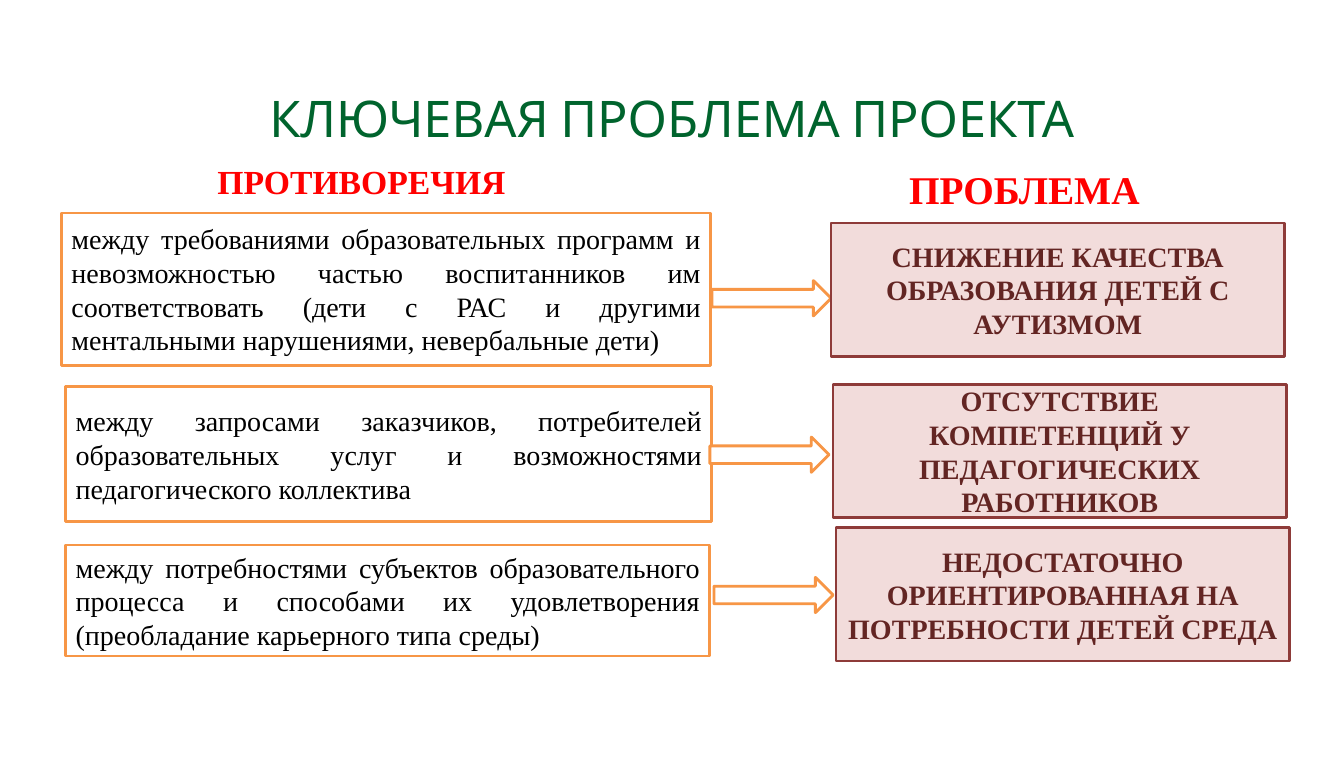
from pptx import Presentation
from pptx.dml.color import RGBColor
from pptx.enum.shapes import MSO_SHAPE
from pptx.enum.text import MSO_ANCHOR, MSO_AUTO_SIZE, PP_ALIGN
from pptx.util import Inches, Pt

GREEN = RGBColor(0x00, 0x64, 0x2D)
RED = RGBColor(0xFF, 0x00, 0x00)
BLACK = RGBColor(0x00, 0x00, 0x00)
WHITE = RGBColor(0xFF, 0xFF, 0xFF)
ORANGE = RGBColor(0xF7, 0x96, 0x46)
PINK = RGBColor(0xF2, 0xDC, 0xDB)
MAROON = RGBColor(0x8E, 0x3B, 0x39)
DARK_RED = RGBColor(0x63, 0x25, 0x23)

CONTRADICTIONS = [
    ((0.61, 2.11, 6.43, 1.51),
     "между требованиями образовательных программ и невозможностью частью "
     "воспитанников им соответствовать (дети с РАС и другими ментальными "
     "нарушениями, невербальные дети)"),
    ((0.65, 3.83, 6.4, 1.34),
     "между запросами заказчиков, потребителей образовательных услуг и "
     "возможностями педагогического коллектива"),
    ((0.65, 5.4, 6.38, 1.1),
     "между потребностями субъектов образовательного процесса и способами "
     "их удовлетворения (преобладание карьерного типа среды)"),
]
PROBLEMS = [
    ((8.23, 2.21), "СНИЖЕНИЕ КАЧЕСТВА ОБРАЗОВАНИЯ ДЕТЕЙ С АУТИЗМОМ"),
    ((8.25, 3.81), "ОТСУТСТВИЕ КОМПЕТЕНЦИЙ У ПЕДАГОГИЧЕСКИХ РАБОТНИКОВ"),
    ((8.28, 5.23), "НЕДОСТАТОЧНО ОРИЕНТИРОВАННАЯ НА ПОТРЕБНОСТИ ДЕТЕЙ СРЕДА"),
]
ARROWS = [(7.05, 2.78), (7.03, 4.33), (7.07, 5.72)]


def write(tf, text, size=20, color=BLACK, font="Times New Roman",
          bold=False, align=PP_ALIGN.CENTER, spacing=None):
    p = tf.paragraphs[0]
    p.alignment = align
    if spacing:
        p.line_spacing = spacing
    r = p.add_run()
    r.text = text
    r.font.size = Pt(size)
    r.font.name = font
    r.font.bold = bold
    r.font.color.rgb = color


def add_label(s, box, text, wrap=True, margins=True, **fmt):
    tf = s.shapes.add_textbox(*map(Inches, box)).text_frame
    tf.word_wrap = wrap
    tf.auto_size = MSO_AUTO_SIZE.SHAPE_TO_FIT_TEXT
    if not margins:
        tf.margin_left = tf.margin_right = tf.margin_top = tf.margin_bottom = 0
    write(tf, text, **fmt)


def add_figure(s, kind, box, fill=WHITE, line=ORANGE):
    sp = s.shapes.add_shape(kind, *map(Inches, box))
    sp.shadow.inherit = False
    sp.fill.solid()
    sp.fill.fore_color.rgb = fill
    sp.line.color.rgb = line
    sp.line.width = Pt(2)
    return sp


def add_card(s, box, text, fill=WHITE, line=ORANGE, **fmt):
    tf = add_figure(s, MSO_SHAPE.RECTANGLE, box, fill, line).text_frame
    tf.word_wrap = True
    tf.vertical_anchor = MSO_ANCHOR.MIDDLE
    write(tf, text, **fmt)


def main():
    prs = Presentation()
    prs.slide_width, prs.slide_height = Inches(13.31), Inches(7.5)
    s = prs.slides.add_slide(prs.slide_layouts[6])

    add_label(s, (0, 0.93, 13.31, 0.55), "КЛЮЧЕВАЯ ПРОБЛЕМА ПРОЕКТА",
              margins=False, size=36, color=GREEN, font="Cabin", spacing=0.9)
    add_label(s, (1.14, 1.54, 4.88, 0.5), "ПРОТИВОРЕЧИЯ",
              size=24, color=RED, bold=True)
    add_label(s, (8.89, 1.59, 2.51, 0.57), "ПРОБЛЕМА", wrap=False,
              size=28, color=RED, bold=True)

    for box, text in CONTRADICTIONS:
        add_card(s, box, text, align=PP_ALIGN.JUSTIFY)
    for corner in ARROWS:
        add_figure(s, MSO_SHAPE.RIGHT_ARROW, (*corner, 1.18, 0.35))
    for corner, text in PROBLEMS:
        add_card(s, (*corner, 4.49, 1.32), text, fill=PINK, line=MAROON,
                 color=DARK_RED, bold=True)

    prs.save("out.pptx")


if __name__ == "__main__":
    main()
